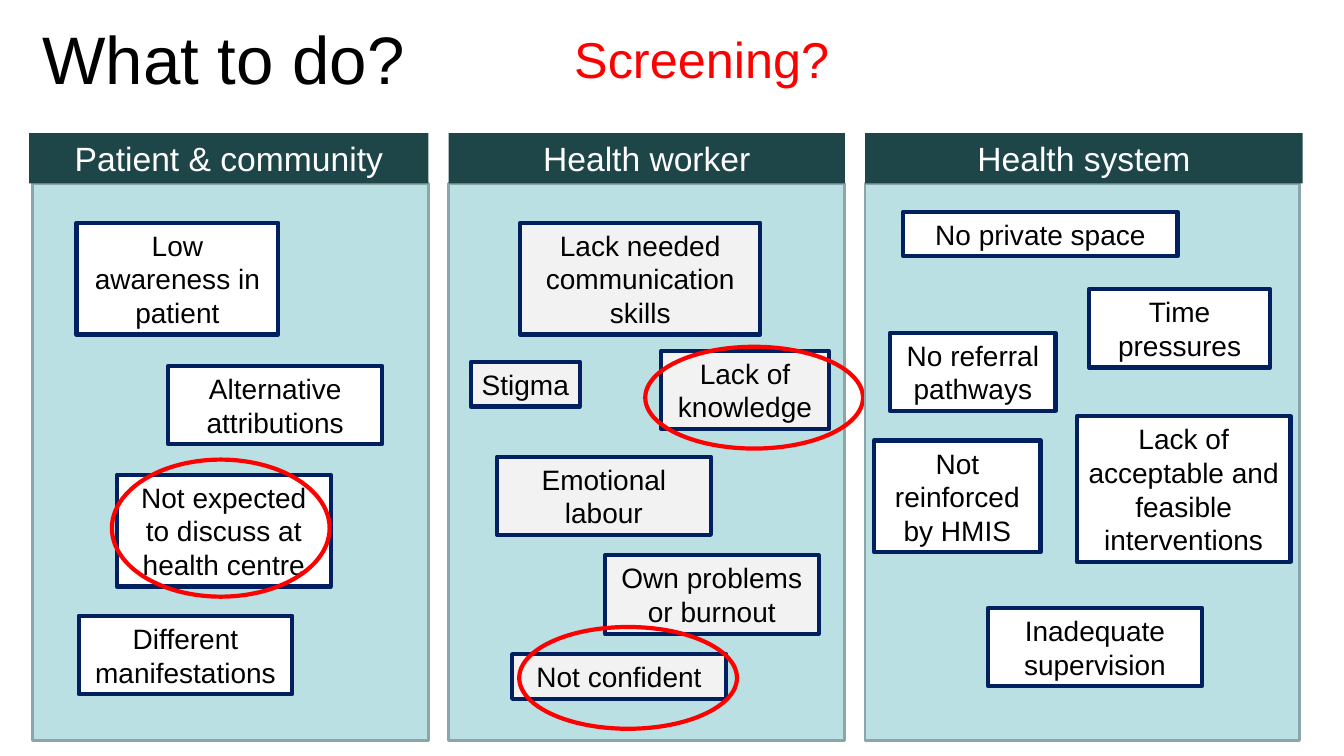
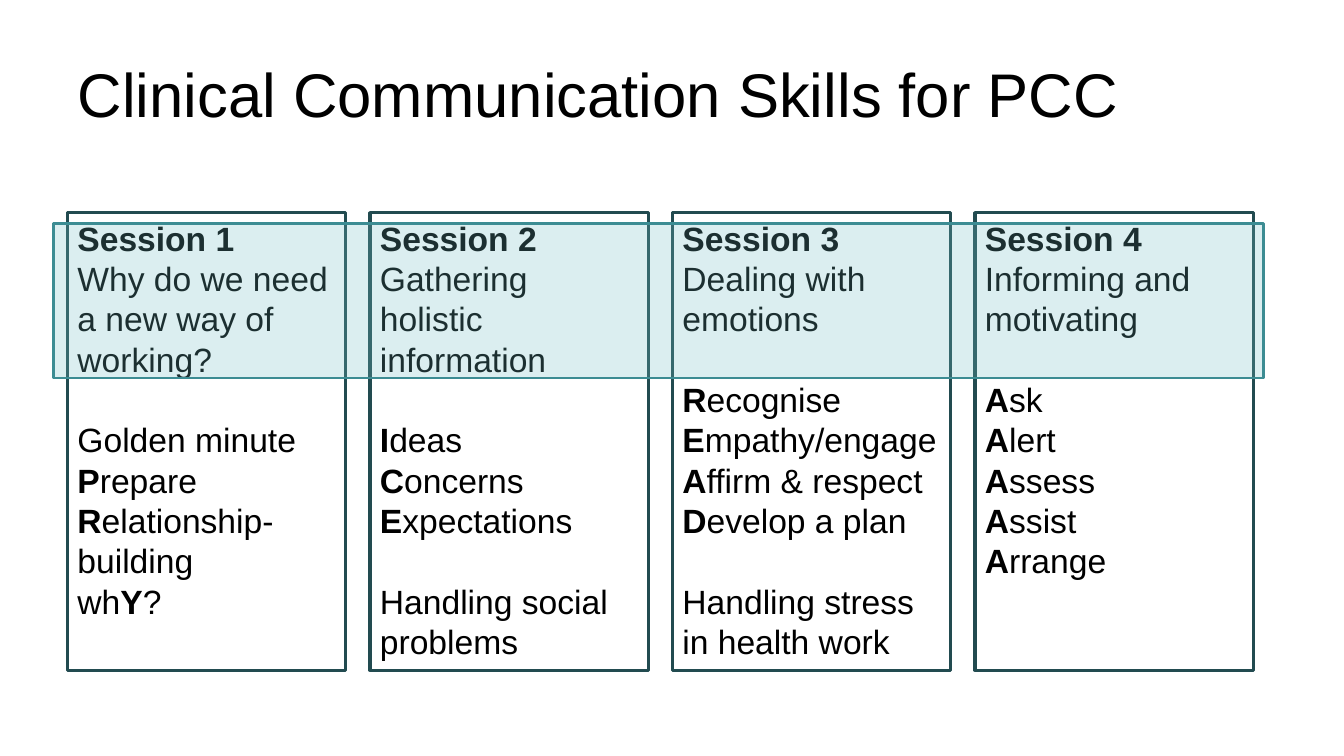
from lxml import etree
from pptx import Presentation
from pptx import util as u
from pptx.dml.color import RGBColor
from pptx.enum import shapes, text
from pptx.oxml.ns import qn

WIDTH, HEIGHT = 13.33, 7.5
FONT = "Arial"
LEADING = 1.2
COLORS = {
    "black": "000000", "white": "FFFFFF", "grey": "F2F2F2", "red": "FF0000",
    "navy": "002060", "panel": "BBE0E3", "panel_line": "8AA6A8",
    "header": "1E4649", "session_line": "224B50",
    "band": "72BFC5", "band_line": "3C8C93",
}
RECT, OVAL = shapes.MSO_SHAPE.RECTANGLE, shapes.MSO_SHAPE.OVAL
CENTER, LEFT = text.PP_ALIGN.CENTER, text.PP_ALIGN.LEFT
TOP, MIDDLE = text.MSO_ANCHOR.TOP, text.MSO_ANCHOR.MIDDLE

CARD_WIDTH = 2.12
RING_WIDTH = 2.16
COLUMN_GAP = 0.2

COLUMNS = [
    {
        "name": "Patient & community", "width": 3.93, "fill": "white", "overhang": (0.03, 0),
        "cards": [
            (0.44, 0.89, 2, 3, "Low awareness in patient"),
            (1.35, 2.31, CARD_WIDTH, 2, "Alternative attributions"),
            (0.84, 3.39, CARD_WIDTH, 3, "Not expected to discuss at health centre"),
            (0.46, 4.79, CARD_WIDTH, 2, "Different manifestations"),
        ],
        "rings": [(0.79, 3.24, 1.36)],
    },
    {
        "name": "Health worker", "width": 3.93, "fill": "grey", "overhang": (0, 0),
        "cards": [
            (0.71, 0.89, 2.38, 3, "Lack needed communication skills"),
            (0.22, 2.27, 1.08, 1, "Stigma"),
            (2.11, 2.16, 1.66, 2, "Lack of knowledge"),
            (0.48, 3.21, CARD_WIDTH, 2, "Emotional labour"),
            (1.55, 4.19, CARD_WIDTH, 2, "Own problems or burnout"),
            (0.63, 5.17, CARD_WIDTH, 1, "Not confident"),
        ],
        "rings": [(1.95, 2.12, 1.01), (0.7, 4.9, 1.01)],
    },
    {
        "name": "Health system", "width": 4.31, "fill": "white", "overhang": (0, 0.03),
        "cards": [
            (0.38, 0.78, 2.72, 1, "No private space"),
            (2.22, 1.55, 1.8, 2, "Time pressures"),
            (0.25, 1.98, 1.64, 2, "No referral pathways"),
            (0.09, 3.05, 1.65, 3, "Not reinforced by HMIS"),
            (2.1, 2.81, CARD_WIDTH, 4, "Lack of acceptable and feasible interventions"),
            (1.22, 4.71, CARD_WIDTH, 2, "Inadequate supervision"),
        ],
        "rings": [],
    },
]

SESSIONS = [
    ("Why do we need a new way of working?",
     [["Golden minute", "*P*repare", "*R*elationship-building", "wh*Y*?"]]),
    ("Gathering holistic information",
     [["*I*deas", "*C*oncerns", "*E*xpectations"], ["Handling social problems"]]),
    ("Dealing with emotions",
     [["*R*ecognise", "*E*mpathy/engage", "*A*ffirm & respect", "*D*evelop a plan"],
      ["Handling stress in health work"]]),
    ("Informing and motivating",
     [["*A*sk", "*A*lert", "*A*ssess", "*A*ssist", "*A*rrange"]]),
]


def rgb(name):
    return RGBColor.from_string(COLORS[name])


def put(obj, **values):
    for key, value in values.items():
        setattr(obj, key, value)


def place(sp, box):
    put(sp, **dict(zip(("left", "top", "width", "height"), map(u.Inches, box))))


def write(tf, paragraphs, size, color="black", align=LEFT, anchor=TOP):
    put(tf, word_wrap=True, vertical_anchor=anchor, auto_size=text.MSO_AUTO_SIZE.NONE)
    for i, (content, before) in enumerate(paragraphs):
        p = tf.paragraphs[0] if i == 0 else tf.add_paragraph()
        put(p, alignment=align, space_before=u.Pt(before), line_spacing=u.Pt(size * LEADING))
        for j, part in enumerate(content.split("*")):
            if part:
                r = p.add_run()
                r.text = part
                put(r.font, name=FONT, size=u.Pt(size), bold=j % 2 == 1)
                r.font.color.rgb = rgb(color)


def add_box(s, box, kind=RECT, fill=None, line=None, weight=1):
    sp = s.shapes.add_shape(kind, *map(u.Inches, box))
    sp.shadow.inherit = False
    if fill:
        sp.fill.solid()
        sp.fill.fore_color.rgb = rgb(fill)
    else:
        sp.fill.background()
    if line:
        sp.line.color.rgb = rgb(line)
        sp.line.width = u.Pt(weight)
    else:
        sp.line.fill.background()
    return sp


def add_slide(prs, title, box, size):
    s = prs.slides.add_slide(prs.slide_layouts[5])
    place(s.shapes.title, box)
    write(s.shapes.title.text_frame, [(title, 0)], size, anchor=MIDDLE)
    return s


def add_column(s, box, column):
    x, y, w, h = box
    header = 0.5
    before, after = column["overhang"]
    add_box(s, (x, y + header, w, h - header), fill="panel", line="panel_line", weight=2)
    sp = add_box(s, (x - before, y, w + before + after, header), fill="header")
    write(sp.text_frame, [(column["name"], 0)], 24, "white", CENTER, MIDDLE)
    for dx, dy, width, lines, label in column["cards"]:
        card = (x + dx, y + dy, width, 0.11 + lines / 3)
        sp = add_box(s, card, fill=column["fill"], line="navy", weight=3)
        write(sp.text_frame, [(label, 0)], 20, align=CENTER, anchor=MIDDLE)
    for dx, dy, height in column["rings"]:
        add_box(s, (x + dx, y + dy, RING_WIDTH, height), OVAL, line="red", weight=3)


def add_session(s, box, number, topic, groups):
    size = 24
    sp = add_box(s, box, fill="white", line="session_line", weight=2.25)
    paragraphs = [(f"*Session {number}*", 0), (topic, 0)]
    for group in groups:
        paragraphs += [(item, 0 if i else size * LEADING) for i, item in enumerate(group)]
    write(sp.text_frame, paragraphs, size)


def add_band(s, box):
    sp = add_box(s, box, fill="band", line="band_line", weight=2)
    color = sp.fill._xPr.find(qn("a:solidFill"))[0]
    etree.SubElement(color, qn("a:alpha")).set("val", "25000")


def barriers_slide(prs):
    left, top = 0.32, 1.32
    s = add_slide(prs, "What to do?", (left, -0.05, 12, 1.25), 48)
    tb = s.shapes.add_textbox(*map(u.Inches, (5.48, 0.23, 2.96, 0.71)))
    write(tb.text_frame, [("Screening?", 0)], 36, "red", CENTER)
    for column in COLUMNS:
        add_column(s, (left, top, column["width"], HEIGHT - 0.15 - top), column)
        left += column["width"] + COLUMN_GAP


def sessions_slide(prs):
    left, top, pitch = 0.67, 2.11, 3
    s = add_slide(prs, "Clinical Communication Skills for PCC", (left, 0.3, 12, 1.25), 44)
    for i, (topic, groups) in enumerate(SESSIONS):
        add_session(s, (left + i * pitch, top, 2.76, 4.54), i + 1, topic, groups)
    add_band(s, (left - 0.14, top + 0.11, len(SESSIONS) * pitch, 1.53))


def main():
    prs = Presentation()
    put(prs, slide_width=u.Inches(WIDTH), slide_height=u.Inches(HEIGHT))
    barriers_slide(prs)
    sessions_slide(prs)
    prs.save("out.pptx")


if __name__ == "__main__":
    main()
